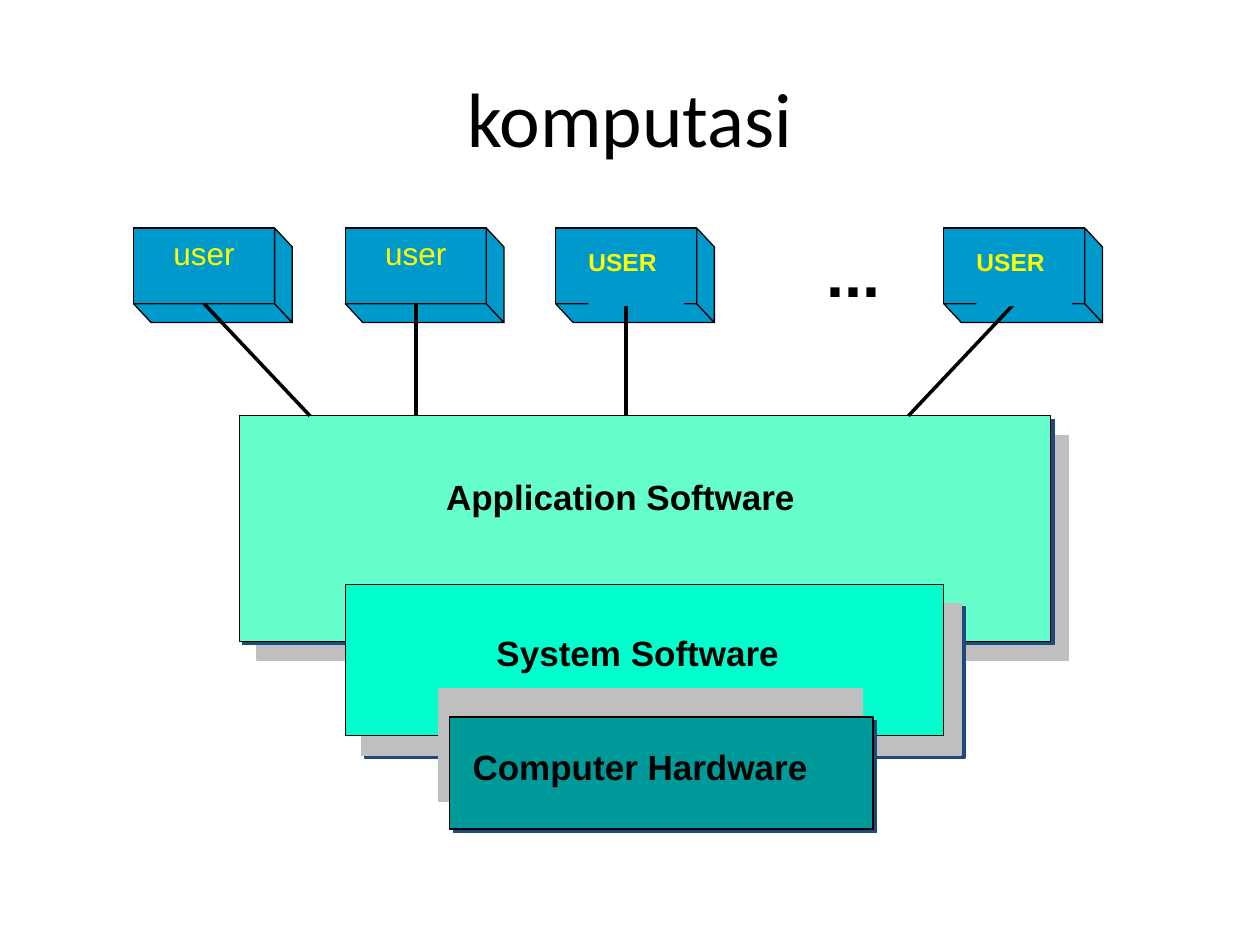
import pptx
import pptx.util
import pptx.dml.color
import pptx.enum.shapes
import pptx.enum.text
import pptx.oxml.ns
from lxml import etree

Inches = pptx.util.Inches
Pt = pptx.util.Pt
ALIGN = pptx.enum.text.PP_ALIGN
ANCHOR = pptx.enum.text.MSO_ANCHOR

COLORS = {
    "ink": "000000",
    "user": "0099CC",
    "user_text": "FFFF00",
    "backing": "BFBFBF",
    "application": "66FFCC",
    "system": "00FFCC",
    "hardware": "009999",
    "shadow": "1F497D",
}
USER_TOP, USER_HEIGHT, USER_WIDTH = 1.81, 0.6, 1.12
DEPTH_X, DEPTH_Y = 0.14, 0.15
USER_BOTTOM = USER_TOP + USER_HEIGHT
APPLICATION_TOP = 3.3


def rgb(name):
    return pptx.dml.color.RGBColor.from_string(COLORS[name])


def drawing_tag(name):
    return pptx.oxml.ns.qn("a:" + name)


def paint(shape, fill, line=None, width=0):
    shape.shadow.inherit = False
    shape.fill.solid()
    shape.fill.fore_color.rgb = rgb(fill)
    if line:
        shape.line.color.rgb = rgb(line)
        shape.line.width = Pt(width)
    else:
        shape.line.fill.background()


def add_block(slide, place, fill, line=None, width=0, shadow=False):
    block = slide.shapes.add_shape(
        pptx.enum.shapes.MSO_SHAPE.RECTANGLE, *map(Inches, place))
    paint(block, fill, line, width)
    if shadow:
        effects = block._element.spPr.find(drawing_tag("effectLst"))
        outer = etree.SubElement(effects, drawing_tag("outerShdw"),
                                 dist=str(Pt(2.8)), dir="2700000",
                                 algn="ctr", rotWithShape="0")
        etree.SubElement(outer, drawing_tag("srgbClr"), val=COLORS["shadow"])
    return block


def add_face(slide, points, fill):
    corners = [(Inches(x), Inches(y)) for x, y in points]
    builder = slide.shapes.build_freeform(*corners[0], scale=1.0)
    builder.add_line_segments(corners[1:], close=True)
    paint(builder.convert_to_shape(), fill, "ink")


def write(shape, text, size, color="ink", font="Arial", bold=False,
          align=ALIGN.LEFT, anchor=ANCHOR.TOP, inset=True):
    frame = shape.text_frame
    frame.word_wrap = True
    frame.vertical_anchor = anchor
    if not inset:
        frame.margin_left = frame.margin_right = 0
        frame.margin_top = frame.margin_bottom = 0
    paragraph = frame.paragraphs[0]
    paragraph.alignment = align
    run = paragraph.add_run()
    run.text = text
    run.font.size = Pt(size)
    run.font.name = font
    run.font.bold = bold
    run.font.color.rgb = rgb(color)


def add_label(slide, place, text, size, **style):
    label = slide.shapes.add_textbox(*map(Inches, place))
    write(label, text, size, **style)


def add_link(slide, start, end):
    link = slide.shapes.add_connector(
        pptx.enum.shapes.MSO_CONNECTOR.STRAIGHT, *map(Inches, start + end))
    link.line.color.rgb = rgb("ink")
    link.line.width = Pt(0)
    etree.SubElement(link._element.spPr, drawing_tag("effectLst"))


def add_user(slide, left, text, link_x):
    right = left + USER_WIDTH
    back_right = right + DEPTH_X
    back_bottom = USER_BOTTOM + DEPTH_Y
    add_face(slide, [(right, USER_BOTTOM), (left, USER_BOTTOM),
                     (left + DEPTH_X, back_bottom),
                     (back_right, back_bottom)], "user")
    front = add_block(slide, (left, USER_TOP, USER_WIDTH, USER_HEIGHT),
                      "user", "ink")
    add_face(slide, [(back_right, back_bottom), (right, USER_BOTTOM),
                     (right, USER_TOP),
                     (back_right, USER_TOP + DEPTH_Y)], "user")
    add_link(slide, (link_x, APPLICATION_TOP),
             (left + USER_WIDTH / 2, USER_BOTTOM))
    if text.islower():
        write(front, text, 18, color="user_text", align=ALIGN.CENTER)
    else:
        patch = add_block(slide, (left + 0.26, 1.96, 0.76, 0.47), "user")
        write(patch, text, 14, color="user_text", bold=True, inset=False)


def add_layer(slide, backing, front, fill, shadowed):
    add_block(slide, backing, "backing", "backing", 1, "backing" in shadowed)
    add_block(slide, front, fill, "ink", shadow="front" in shadowed)


def main():
    deck = pptx.Presentation()
    deck.slide_width, deck.slide_height = Inches(10), Inches(7.5)
    slide = deck.slides.add_slide(deck.slide_layouts[6])

    add_label(slide, (0.5, 0.3, 9, 1.25), "komputasi", 44, font="Calibri",
              align=ALIGN.CENTER, anchor=ANCHOR.MIDDLE)

    layers = [
        ((2.04, 3.46, 6.44, 1.78), (1.9, APPLICATION_TOP, 6.44, 1.79),
         "application", ["front"]),
        ((2.87, 4.79, 4.76, 1.2), (2.74, 4.64, 4.75, 1.2),
         "system", ["backing"]),
        ((3.48, 5.47, 3.36, 0.89), (3.57, 5.69, 3.36, 0.89),
         "hardware", ["front"]),
    ]
    for layer in layers:
        add_layer(slide, *layer)

    users = [(1.06, "user", 2.46), (2.74, "user", 3.3),
             (4.41, "USER", 4.97), (7.49, "USER", 7.21)]
    for user in users:
        add_user(slide, *user)

    labels = [
        ((6.56, 1.85, 0.95, 1.23), "...", 37),
        ((3.54, 3.77, 3.12, 0.33), "Application Software", 20),
        ((3.94, 5.01, 2.49, 0.33), "System Software", 20),
        ((3.75, 5.92, 3.02, 0.33), "Computer Hardware", 20),
    ]
    for place, text, size in labels:
        add_label(slide, place, text, size, bold=True, inset=False)

    deck.save("out.pptx")


main()
